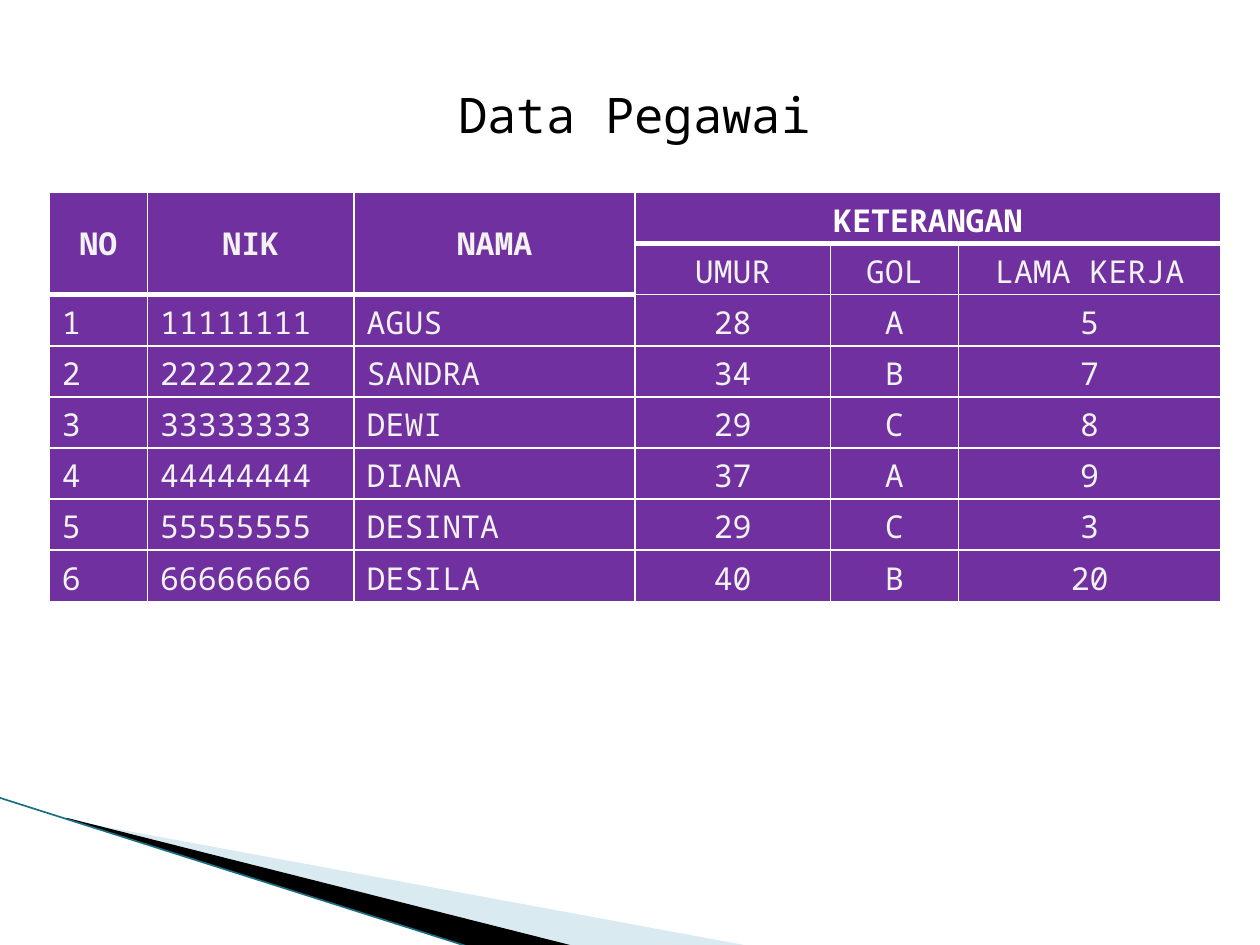
from dataclasses import dataclass

from lxml import etree
from pptx import Presentation
from pptx.dml.color import RGBColor
from pptx.enum.shapes import MSO_CONNECTOR
from pptx.enum.text import MSO_ANCHOR, MSO_AUTO_SIZE, PP_ALIGN
from pptx.oxml.ns import qn
from pptx.util import Pt

LEFT, CENTER = PP_ALIGN.LEFT, PP_ALIGN.CENTER
TOP, MIDDLE = MSO_ANCHOR.TOP, MSO_ANCHOR.MIDDLE
GROW = MSO_AUTO_SIZE.SHAPE_TO_FIT_TEXT
STRAIGHT = MSO_CONNECTOR.STRAIGHT


@dataclass(frozen=True)
class Theme:
    font: str = "Noto Sans Mono"
    title_size: float = 28
    table_size: float = 18
    black: str = "000000"
    white: str = "FFFFFF"
    off_white: str = "F2F2F2"
    purple: str = "7030A0"
    pale_blue: str = "A0CBDC"
    teal: str = "1C6E82"
    thin: float = 1
    thick: float = 3


THEME = Theme()
COLUMN_WIDTHS = [56.2, 118.1, 160.5, 111.6, 73.2, 150]
SIDE_HEADERS = ["NO", "NIK", "NAMA"]
GROUP_HEADER = "KETERANGAN"
SUB_HEADERS = ["UMUR", "GOL", "LAMA KERJA"]
EMPLOYEES = [
    ("1", "11111111", "AGUS", "28", "A", "5"),
    ("2", "22222222", "SANDRA", "34", "B", "7"),
    ("3", "33333333", "DEWI", "29", "C", "8"),
    ("4", "44444444", "DIANA", "37", "A", "9"),
    ("5", "55555555", "DESINTA", "29", "C", "3"),
    ("6", "66666666", "DESILA", "40", "B", "20"),
]


def rgb(value):
    return RGBColor.from_string(value)


def write_text(tf, text, size, color, align=CENTER, bold=False):
    p = tf.paragraphs[0]
    p.alignment = align
    r = p.add_run()
    r.text = text
    r.font.name = THEME.font
    r.font.size = Pt(size)
    r.font.bold = bold
    r.font.color.rgb = rgb(color)


def set_frame(sp, left, top, width, height):
    dx, dy = sp.left - Pt(left), sp.top - Pt(top)
    outline = next(sp._element.iter(qn("a:path")))
    outline.set("w", str(Pt(width)))
    outline.set("h", str(Pt(height)))
    for pt in outline.iter(qn("a:pt")):
        pt.set("x", str(int(pt.get("x")) + dx))
        pt.set("y", str(int(pt.get("y")) + dy))
    sp.left, sp.top = Pt(left), Pt(top)
    sp.width, sp.height = Pt(width), Pt(height)


def add_wedge(s, left, top, width, height, points, color, opacity=100):
    (x, y), *rest = [(Pt(left + px), Pt(top + py)) for px, py in points]
    builder = s.shapes.build_freeform(x, y)
    builder.add_line_segments(rest, close=True)
    sp = builder.convert_to_shape()
    set_frame(sp, left, top, width, height)
    sp.shadow.inherit = False
    sp.line.fill.background()
    sp.fill.solid()
    sp.fill.fore_color.rgb = rgb(color)
    if opacity < 100:
        clr = sp.fill._xPr.find(qn("a:solidFill"))[0]
        etree.SubElement(clr, qn("a:alpha")).set("val", str(opacity * 1000))


def add_corner(s, left, top, width, height):
    add_wedge(s, left + 56.6, top - 62, width, 113.8,
              [(-16.6, 74.9), (373.5, 147), (272.1, 147), (-16.6, 74.2)],
              THEME.pale_blue, opacity=40)
    add_wedge(s, left - 3.8, top, width, 66.2,
              [(42.3, 11.5), (333.3, height), (272.1, height), (43, 12.2)],
              THEME.black)
    edge = s.shapes.add_connector(STRAIGHT, Pt(left), Pt(top),
                                  Pt(left + 267.6), Pt(top + height))
    edge.line.color.rgb = rgb(THEME.teal)
    edge.line.width = Pt(0.95)
    etree.SubElement(edge._element.spPr, qn("a:effectLst"))


def add_title(s, left, top, width, height, text):
    tf = s.shapes.add_textbox(Pt(left), Pt(top), Pt(width), Pt(height)).text_frame
    tf.word_wrap = True
    tf.auto_size = GROW
    write_text(tf, text, THEME.title_size, THEME.black)


def rule_width(boundary, col):
    header_end = 2 if col < len(SIDE_HEADERS) else 1
    return THEME.thick if boundary == header_end else THEME.thin


def style_cell(cell, row, col):
    tc_pr = cell._tc.get_or_add_tcPr()
    widths = {"L": THEME.thin, "R": THEME.thin,
              "T": rule_width(row, col), "B": rule_width(row + 1, col)}
    for side, width in widths.items():
        ln = etree.SubElement(tc_pr, qn(f"a:ln{side}"), w=str(Pt(width)))
        fill = etree.SubElement(ln, qn("a:solidFill"))
        etree.SubElement(fill, qn("a:srgbClr"), val=THEME.white)
    cell.fill.solid()
    cell.fill.fore_color.rgb = rgb(THEME.purple)


def fill_cell(cell, text, anchor=TOP, color=THEME.off_white, **fmt):
    cell.vertical_anchor = anchor
    write_text(cell.text_frame, text, THEME.table_size, color, **fmt)


def add_employee_table(s, left, top, width, height):
    n_rows, n_cols = len(EMPLOYEES) + 2, len(COLUMN_WIDTHS)
    table = s.shapes.add_table(n_rows, n_cols, Pt(left), Pt(top),
                               Pt(width), Pt(height)).table
    table.first_row = False
    table.horz_banding = False
    for column, column_width in zip(table.columns, COLUMN_WIDTHS):
        column.width = Pt(column_width)
    for row in table.rows:
        row.height = Pt(height / n_rows)
    for row in range(n_rows):
        for col in range(n_cols):
            style_cell(table.cell(row, col), row, col)

    n_side = len(SIDE_HEADERS)
    for col, text in enumerate(SIDE_HEADERS):
        table.cell(0, col).merge(table.cell(1, col))
        fill_cell(table.cell(0, col), text, anchor=MIDDLE, bold=True)
    table.cell(0, n_side).merge(table.cell(0, n_cols - 1))
    fill_cell(table.cell(0, n_side), GROUP_HEADER, color=THEME.white, bold=True)
    for col, text in enumerate(SUB_HEADERS, n_side):
        fill_cell(table.cell(1, col), text)
    for row, employee in enumerate(EMPLOYEES, 2):
        for col, text in enumerate(employee):
            fill_cell(table.cell(row, col), text,
                      align=LEFT if col < n_side else CENTER)


def main():
    prs = Presentation()
    prs.slide_width, prs.slide_height = Pt(720), Pt(540)
    s = prs.slides.add_slide(prs.slide_layouts[6])
    s.background.fill.solid()
    s.background.fill.fore_color.rgb = rgb(THEME.white)
    add_corner(s, -0.5, 455.8, 299.5, 85)
    add_title(s, 22.3, 44.6, 680.4, 41, "Data Pegawai")
    add_employee_table(s, 28.1, 110, sum(COLUMN_WIDTHS), 233.6)
    prs.save("out.pptx")


if __name__ == "__main__":
    main()
